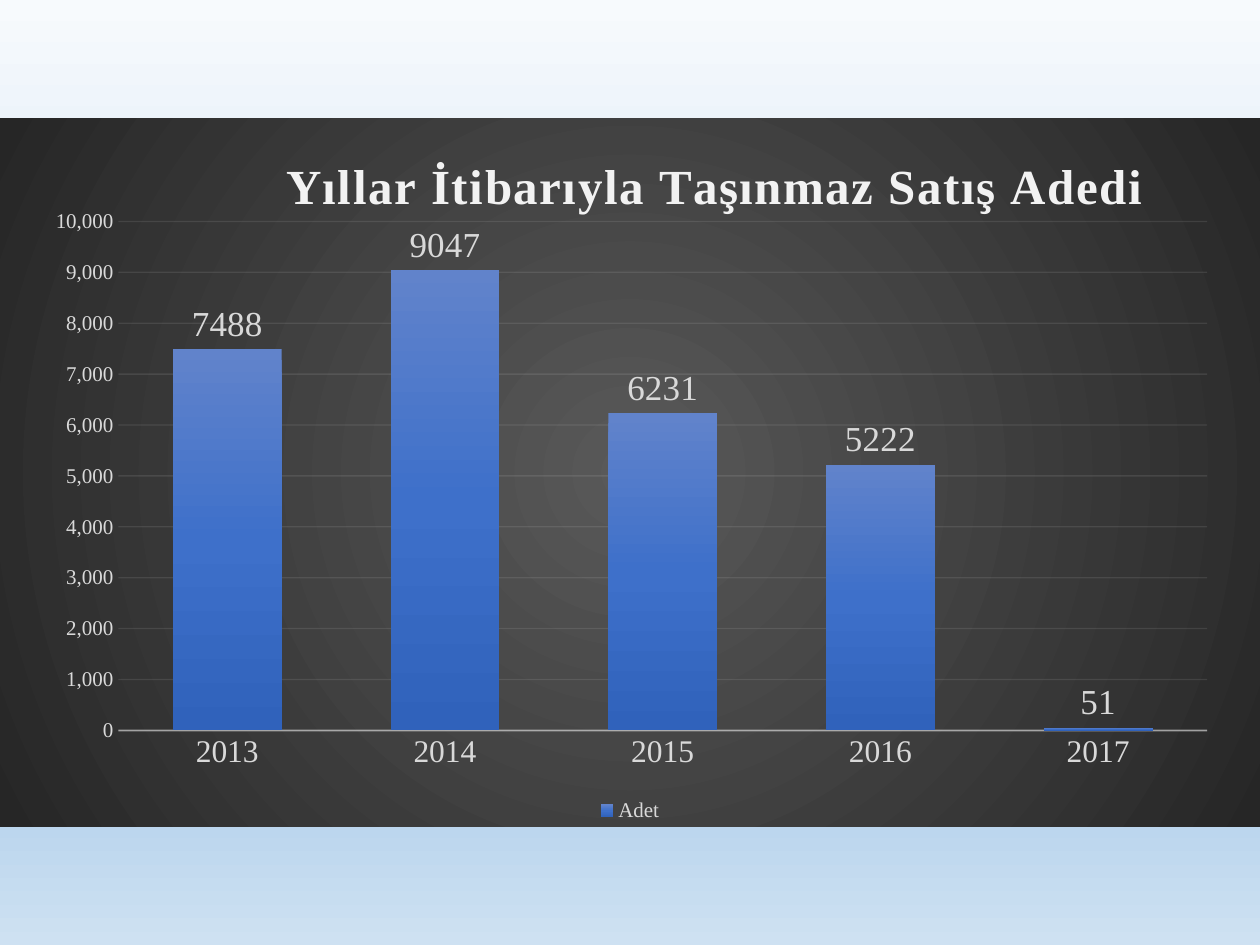
from lxml.etree import SubElement
from pptx import Presentation
from pptx.chart.data import CategoryChartData
from pptx.dml.color import RGBColor
from pptx.enum.chart import XL_CHART_TYPE as ChartType
from pptx.enum.chart import XL_LABEL_POSITION as LabelPosition
from pptx.enum.chart import XL_LEGEND_POSITION as LegendPosition
from pptx.enum.chart import XL_TICK_MARK as TickMark
from pptx.oxml import parse_xml
from pptx.oxml.ns import nsdecls, qn
from pptx.util import Pt

PX = 914400 // 126
FONT = "Times New Roman"
SALES = {"2013": 7488, "2014": 9047, "2015": 6231, "2016": 5222, "2017": 51}

WHITE = RGBColor(0xF2, 0xF2, 0xF2)
LIGHT_GRAY = RGBColor(0xD9, 0xD9, 0xD9)
SKY_TOP = RGBColor(0xF7, 0xFA, 0xFD)
SKY = RGBColor(0xB5, 0xD2, 0xEC)
SKY_BOTTOM = RGBColor(0xCE, 0xE1, 0xF2)
GRAY = RGBColor(0x59, 0x59, 0x59)
CHARCOAL = RGBColor(0x26, 0x26, 0x26)
BLUE_TOP = RGBColor(0x61, 0x83, 0xCB)
BLUE = RGBColor(0x3E, 0x70, 0xCA)
BLUE_BOTTOM = RGBColor(0x30, 0x62, 0xBB)

DOWNWARD = '<a:lin ang="5400000" scaled="0"/>'
FROM_CENTRE = ('<a:path path="circle"><a:fillToRect l="50000" t="50000" '
               'r="50000" b="50000"/></a:path>')


def gradient(stops, direction):
    marks = "".join(
        f'<a:gs pos="{percent * 1000}"><a:srgbClr val="{color}"/></a:gs>'
        for percent, color in stops)
    return parse_xml(f'<a:gradFill {nsdecls("a")} rotWithShape="1">'
                     f'<a:gsLst>{marks}</a:gsLst>{direction}</a:gradFill>')


def replace_solid(properties, new_fill):
    solid = properties.find(qn("a:solidFill"))
    properties.replace(solid, new_fill)


def style_font(font, size, color=LIGHT_GRAY, bold=False):
    font.name = FONT
    font.size = Pt(size)
    font.bold = bold
    font.color.rgb = color


def style_line(line, width, opacity):
    """Draw a pale line with the given opacity in percent."""
    line.width = Pt(width)
    line.color.rgb = WHITE
    for color in line._get_or_add_ln().iter(qn("a:srgbClr")):
        SubElement(color, qn("a:alpha"), val=str(opacity * 1000))


def place(part, index, **values):
    """Give a chart part a manual layout in fractions of the chart."""
    for old in part.findall(qn("c:layout")):
        part.remove(old)
    layout = parse_xml(f'<c:layout {nsdecls("c")}><c:manualLayout/></c:layout>')
    for name, value in values.items():
        SubElement(layout[0], qn(f"c:{name}"), val=str(value))
    part.insert(index, layout)


def paint_background(slide):
    slide.background.fill.solid()
    properties = slide._element.cSld.find(qn("p:bg")).find(qn("p:bgPr"))
    replace_solid(properties, gradient(
        [(0, SKY_TOP), (74, SKY), (83, SKY), (100, SKY_BOTTOM)], DOWNWARD))


def paint_chart_area(chart):
    properties = parse_xml(f'<c:spPr {nsdecls("c", "a")}><a:ln><a:noFill/></a:ln></c:spPr>')
    properties.insert(0, gradient([(0, GRAY), (100, CHARCOAL)], FROM_CENTRE))
    chart.element.find(qn("c:chart")).addnext(properties)


def add_title(chart, text):
    heading = chart.chart_title.text_frame.paragraphs[0]
    heading.text = text
    style_font(heading.font, 28, WHITE, bold=True)
    for run in heading.runs:
        run.font._element.set("spc", "100")
    place(chart.element.find(qn("c:chart")).find(qn("c:title")), 1,
          xMode="edge", yMode="edge", x=0.22, y=0.04)


def style_axes(chart):
    years, counts = chart.category_axis, chart.value_axis
    for axis, size in ((years, 18), (counts, 12)):
        axis.major_tick_mark = axis.minor_tick_mark = TickMark.NONE
        style_font(axis.tick_labels.font, size)
    style_line(years.format.line, 1, 54)
    counts.format.line.fill.background()
    counts.minimum_scale, counts.maximum_scale, counts.major_unit = 0, 10000, 1000
    counts.tick_labels.number_format = "#,##0"
    counts.tick_labels.number_format_is_linked = False
    style_line(counts.major_gridlines.format.line, 0.75, 10)


def style_columns(plot):
    plot.gap_width = 100
    plot.overlap = -24
    plot.vary_by_categories = False
    series = plot.series[0]
    series.invert_if_negative = False
    series.format.fill.solid()
    series.format.fill.fore_color.rgb = BLUE
    replace_solid(series._element.find(qn("c:spPr")), gradient(
        [(0, BLUE_TOP), (50, BLUE), (100, BLUE_BOTTOM)], DOWNWARD))
    labels = series.data_labels
    labels.show_value = True
    labels.position = LabelPosition.OUTSIDE_END
    style_font(labels.font, 20)


def add_sales_chart(slide):
    data = CategoryChartData()
    data.categories = list(SALES)
    data.add_series("Adet", list(SALES.values()))
    chart = slide.shapes.add_chart(ChartType.COLUMN_CLUSTERED, 0, 118 * PX,
                                   1260 * PX, 709 * PX, data).chart
    paint_chart_area(chart)
    add_title(chart, "Yıllar İtibarıyla Taşınmaz Satış Adedi")
    style_axes(chart)
    style_columns(chart.plots[0])
    chart.has_legend = True
    chart.legend.position = LegendPosition.BOTTOM
    chart.legend.include_in_layout = False
    style_font(chart.legend.font, 12)
    place(chart.element.find(qn("c:chart")).find(qn("c:plotArea")), 0,
          layoutTarget="inner", xMode="edge", yMode="edge",
          x=0.094, y=0.146, w=0.864, h=0.718)


def main():
    deck = Presentation()
    deck.slide_width, deck.slide_height = 1260 * PX, 945 * PX
    slide = deck.slides.add_slide(deck.slide_layouts[6])
    paint_background(slide)
    add_sales_chart(slide)
    deck.save("out.pptx")


if __name__ == "__main__":
    main()
